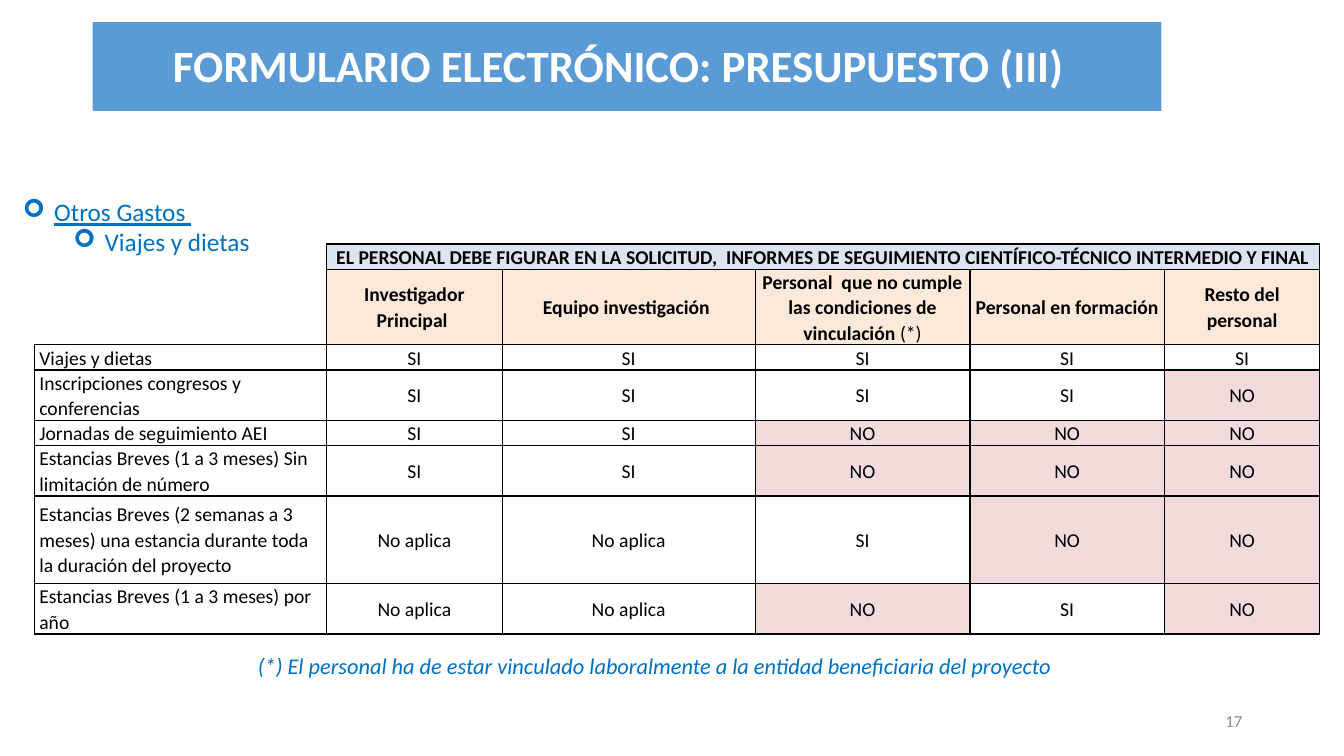
import pptx
import pptx.util
import pptx.dml.color
import pptx.enum.shapes
import pptx.enum.text
import pptx.oxml.ns
from lxml import etree
from pptx.util import Inches

RGBColor = pptx.dml.color.RGBColor
ALIGN = pptx.enum.text.PP_ALIGN
ANCHOR = pptx.enum.text.MSO_ANCHOR

BAND_BLUE = RGBColor(0x5B, 0x9B, 0xD5)
TEXT_BLUE = RGBColor(0x00, 0x70, 0xC0)
BANNER_FILL = RGBColor(0xDB, 0xE5, 0xF1)
HEADING_FILL = RGBColor(0xFD, 0xE9, 0xD9)
NO_FILL = RGBColor(0xF2, 0xDB, 0xDB)
GREY = RGBColor(0x8C, 0x8C, 0x8C)
BLACK = RGBColor(0, 0, 0)
WHITE = RGBColor(0xFF, 0xFF, 0xFF)

COLUMN_WIDTHS = [2.9, 1.74, 2.51, 2.13, 1.93, 1.54]
ROW_HEIGHTS = [0.25, 0.75, 0.25, 0.5, 0.25, 0.5, 0.87, 0.5]
BANNER = ("EL PERSONAL DEBE FIGURAR EN LA SOLICITUD,  INFORMES DE SEGUIMIENTO "
          "CIENTÍFICO-TÉCNICO INTERMEDIO Y FINAL")
HEADINGS = ["Investigador Principal ", "Equipo investigación ",
            "Personal  que no cumple las condiciones de vinculación ",
            "Personal en formación ", "Resto del personal"]
EXPENSES = [
    ("Viajes y dietas", "SI", "SI", "SI", "SI", "SI"),
    ("Inscripciones congresos y conferencias", "SI", "SI", "SI", "SI", "NO"),
    ("Jornadas de seguimiento AEI", "SI", "SI", "NO", "NO", "NO"),
    ("Estancias Breves (1 a 3 meses) Sin limitación de número",
     "SI", "SI", "NO", "NO", "NO"),
    ("Estancias Breves (2 semanas a 3 meses) una estancia durante toda "
     "la duración del proyecto", "No aplica", "No aplica", "SI", "NO", "NO"),
    ("Estancias Breves (1 a 3 meses) por año",
     "No aplica", "No aplica", "NO", "SI", "NO"),
]


def add_element(parent, tag, **attributes):
    return etree.SubElement(parent, pptx.oxml.ns.qn(tag), attributes)


def format_runs(para, size, color, **styles):
    for span in para.runs:
        span.font.name = "Calibri"
        span.font.size = pptx.util.Pt(size)
        span.font.color.rgb = color
        for style, value in styles.items():
            setattr(span.font, style, value)


def add_title(page, text):
    """Fill the title and lay the blue band behind it."""
    band = page.shapes.add_shape(pptx.enum.shapes.MSO_SHAPE.RECTANGLE,
                                 Inches(0.92), Inches(0.22), Inches(10.6), Inches(0.88))
    band.shadow.inherit = False
    band.fill.solid()
    band.fill.fore_color.rgb = BAND_BLUE
    band.line.fill.background()
    title = page.shapes.title
    title.element.addprevious(band.element)
    title.left, title.top = Inches(0.34), Inches(0.41)
    title.width, title.height = Inches(11.59), Inches(0.66)
    title.text_frame.text = text
    title.text_frame.vertical_anchor = ANCHOR.TOP
    para = title.text_frame.paragraphs[0]
    para.alignment = ALIGN.CENTER
    para.line_spacing = 0.85
    format_runs(para, 32, WHITE, bold=True)


def add_text(page, text, left, top, width, height, wrap=True, anchor=ANCHOR.MIDDLE):
    box = page.shapes.add_textbox(Inches(left), Inches(top), Inches(width), Inches(height))
    box.text_frame.word_wrap = wrap
    box.text_frame.vertical_anchor = anchor
    box.text_frame.text = text
    return box.text_frame


def add_bullet(para, left):
    properties = para._p.get_or_add_pPr()
    properties.set("marL", str(Inches(left)))
    properties.set("indent", str(Inches(-0.31)))
    add_element(properties, "a:buFont", typeface="Wingdings")
    add_element(properties, "a:buChar", char="➢")


def add_borders(cell, sides):
    """Draw the named sides in black and leave the others without a line."""
    properties = cell._tc.get_or_add_tcPr()
    for side in "LRTB":
        line = add_element(properties, "a:ln" + side, w=str(pptx.util.Pt(1)))
        if side in sides:
            fill = add_element(line, "a:solidFill")
            add_element(fill, "a:srgbClr", val=str(BLACK))
        else:
            add_element(line, "a:noFill")


def format_cell(cell, sides="LRTB", fill=None):
    cell.margin_left = cell.margin_right = Inches(0.05)
    cell.margin_top = cell.margin_bottom = 0
    cell.vertical_anchor = ANCHOR.MIDDLE
    add_borders(cell, sides)
    if fill is None:
        cell.fill.background()
    else:
        cell.fill.solid()
        cell.fill.fore_color.rgb = fill


def write_cell(cell, text, bold=False, centred=True):
    cell.text_frame.text = text
    para = cell.text_frame.paragraphs[0]
    para.alignment = ALIGN.CENTER if centred else ALIGN.LEFT
    para.line_spacing = 1.07
    format_runs(para, 14, BLACK, bold=bold)


def add_expense_table(page):
    frame = page.shapes.add_table(len(ROW_HEIGHTS), len(COLUMN_WIDTHS), Inches(0.34),
                                  Inches(2.42), Inches(sum(COLUMN_WIDTHS)),
                                  Inches(sum(ROW_HEIGHTS)))
    table = frame.table
    table.first_row = table.horz_banding = False
    for column, width in zip(table.columns, COLUMN_WIDTHS):
        column.width = Inches(width)
    for row, height in zip(table.rows, ROW_HEIGHTS):
        row.height = Inches(height)

    for row, sides in enumerate(["R", "RB"]):
        corner = table.cell(row, 0)
        format_cell(corner, sides)
        add_element(corner.text_frame.paragraphs[0]._p, "a:endParaRPr", sz="1400")

    for column, heading in enumerate(HEADINGS, start=1):
        format_cell(table.cell(0, column), fill=BANNER_FILL)
        format_cell(table.cell(1, column), fill=HEADING_FILL)
        write_cell(table.cell(1, column), heading, bold=True)
    table.cell(0, 1).merge(table.cell(0, len(HEADINGS)))
    write_cell(table.cell(0, 1), BANNER, bold=True)
    mark = table.cell(1, 3).text_frame.paragraphs[0].add_run()
    mark.text = "(*)"
    mark.font.name = "Calibri"
    mark.font.size = pptx.util.Pt(14)
    mark.font.color.rgb = BLACK
    mark.font.bold = False

    for row, expense in enumerate(EXPENSES, start=2):
        for column, text in enumerate(expense):
            cell = table.cell(row, column)
            format_cell(cell, fill=NO_FILL if text == "NO" else None)
            write_cell(cell, text, centred=column > 0)


def main():
    deck = pptx.Presentation()
    deck.slide_width, deck.slide_height = Inches(13.33), Inches(7.5)
    page = deck.slides.add_slide(deck.slide_layouts[5])
    add_title(page, "FORMULARIO ELECTRÓNICO: PRESUPUESTO (III)")

    number = add_text(page, "17", 9.42, 6.95, 3, 0.4)
    number.paragraphs[0].alignment = ALIGN.RIGHT
    format_runs(number.paragraphs[0], 12, GREY)

    topics = add_text(page, "Otros Gastos \nViajes y dietas", 0.13, 1.9, 12.5, 0.71,
                      anchor=ANCHOR.TOP)
    for level, para in enumerate(topics.paragraphs):
        para.level = level
        add_bullet(para, 0.31 + 0.5 * level)
        format_runs(para, 18, TEXT_BLUE, underline=level == 0)

    add_expense_table(page)

    footnote = add_text(page, "(*) El personal ha de estar vinculado laboralmente a la "
                        "entidad beneficiaria del proyecto", 2.46, 6.42, 8.23, 0.37,
                        wrap=False)
    footnote.paragraphs[0].alignment = ALIGN.JUSTIFY
    format_runs(footnote.paragraphs[0], 16, TEXT_BLUE, italic=True)
    deck.save("out.pptx")


if __name__ == "__main__":
    main()
